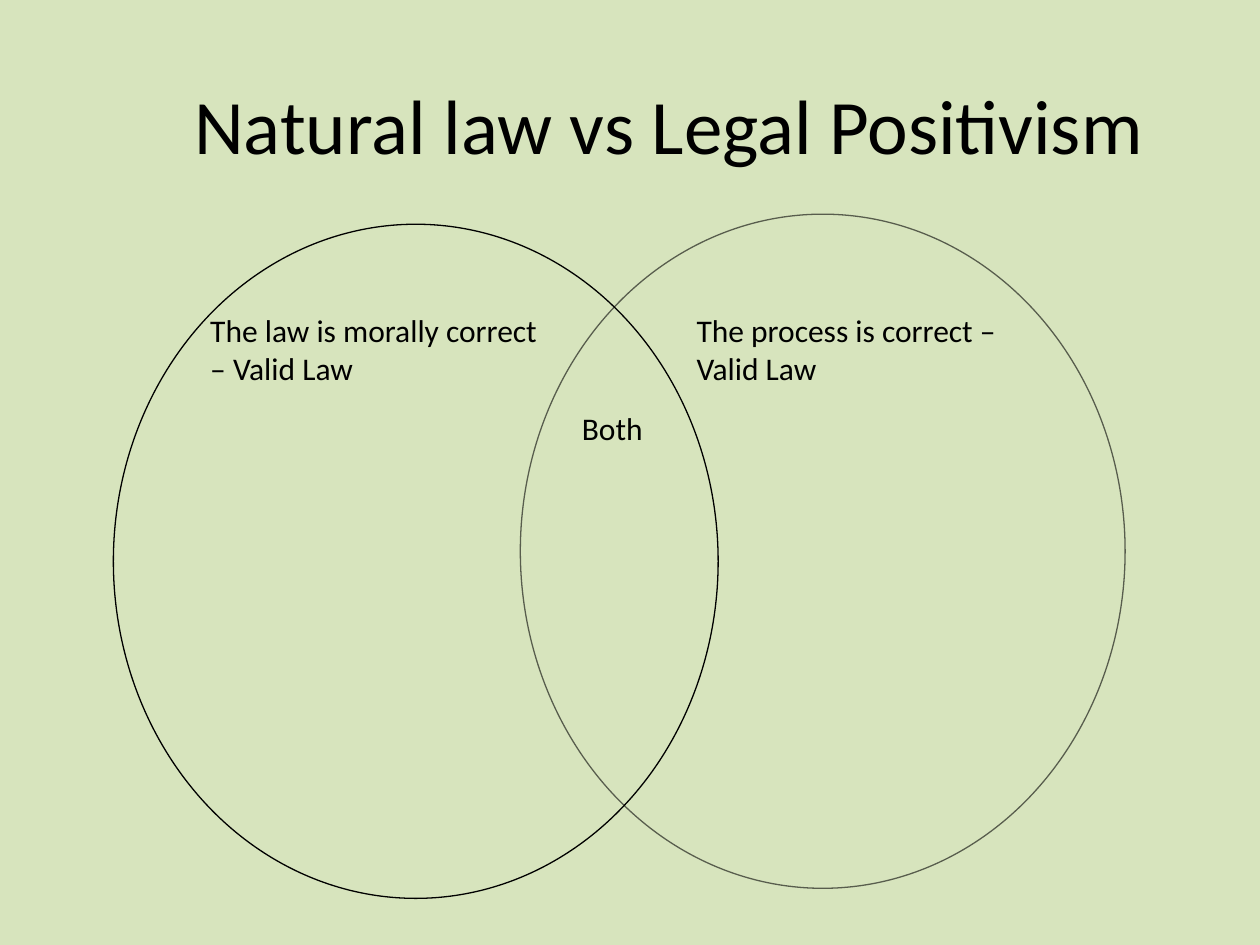
from lxml.etree import SubElement
from pptx import Presentation
from pptx.dml.color import RGBColor
from pptx.enum.shapes import MSO_SHAPE as Shape
from pptx.enum.text import MSO_ANCHOR as Anchor, PP_ALIGN as Align
from pptx.oxml.ns import qn
from pptx.util import Inches, Pt

COLORS = {"background": "D7E4BD", "ink": "000000"}
FONT = "Calibri"
CIRCLE_WIDTH, CIRCLE_HEIGHT = 4.8, 5.35
CLAIM_TOP, CLAIM_WIDTH, CLAIM_HEIGHT = 2.42, 2.91, 0.91


def color(name):
    return RGBColor.from_string(COLORS[name])


def add_text(slide, text, left, top, width, height, size=18,
             align=Align.LEFT, anchor=Anchor.TOP):
    box = slide.shapes.add_textbox(
        Inches(left), Inches(top), Inches(width), Inches(height))
    frame = box.text_frame
    frame.word_wrap = True
    frame.vertical_anchor = anchor
    paragraph = frame.paragraphs[0]
    paragraph.alignment = align
    run = paragraph.add_run()
    run.text = text
    run.font.name = FONT
    run.font.size = Pt(size)
    run.font.color.rgb = color("ink")


def add_venn_circle(group, left, top, opacity=100):
    circle = group.shapes.add_shape(
        Shape.OVAL, Inches(left), Inches(top),
        Inches(CIRCLE_WIDTH), Inches(CIRCLE_HEIGHT))
    circle.shadow.inherit = False
    circle.fill.background()
    circle.line.width = Pt(0.75)
    circle.line.color.rgb = color("ink")
    if opacity < 100:
        line_color = next(circle.element.iter(qn("a:srgbClr")))
        SubElement(line_color, qn("a:alpha"), val=str(opacity * 1000))


def main():
    prs = Presentation()
    prs.slide_width, prs.slide_height = Inches(10), Inches(7.5)
    slide = prs.slides.add_slide(prs.slide_layouts[6])
    slide.background.fill.solid()
    slide.background.fill.fore_color.rgb = color("background")

    # Title
    add_text(slide, "Natural law vs Legal Positivism", 1.06, 0.36, 8.5, 1.25,
             size=44, align=Align.CENTER, anchor=Anchor.MIDDLE)

    # Venn diagram: legal positivism behind, natural law in front
    venn = slide.shapes.add_group_shape()
    add_venn_circle(venn, 4.13, 1.7, opacity=59)
    add_venn_circle(venn, 0.9, 1.78)

    # Claims of each theory and their overlap
    for claim, left in (("The process is correct – Valid Law", 5.43),
                        ("The law is morally correct – Valid Law", 1.57)):
        add_text(slide, claim, left, CLAIM_TOP, CLAIM_WIDTH, CLAIM_HEIGHT)
    add_text(slide, "Both", 4.52, 3.2, 0.9, 0.51)

    prs.save("out.pptx")


if __name__ == "__main__":
    main()
